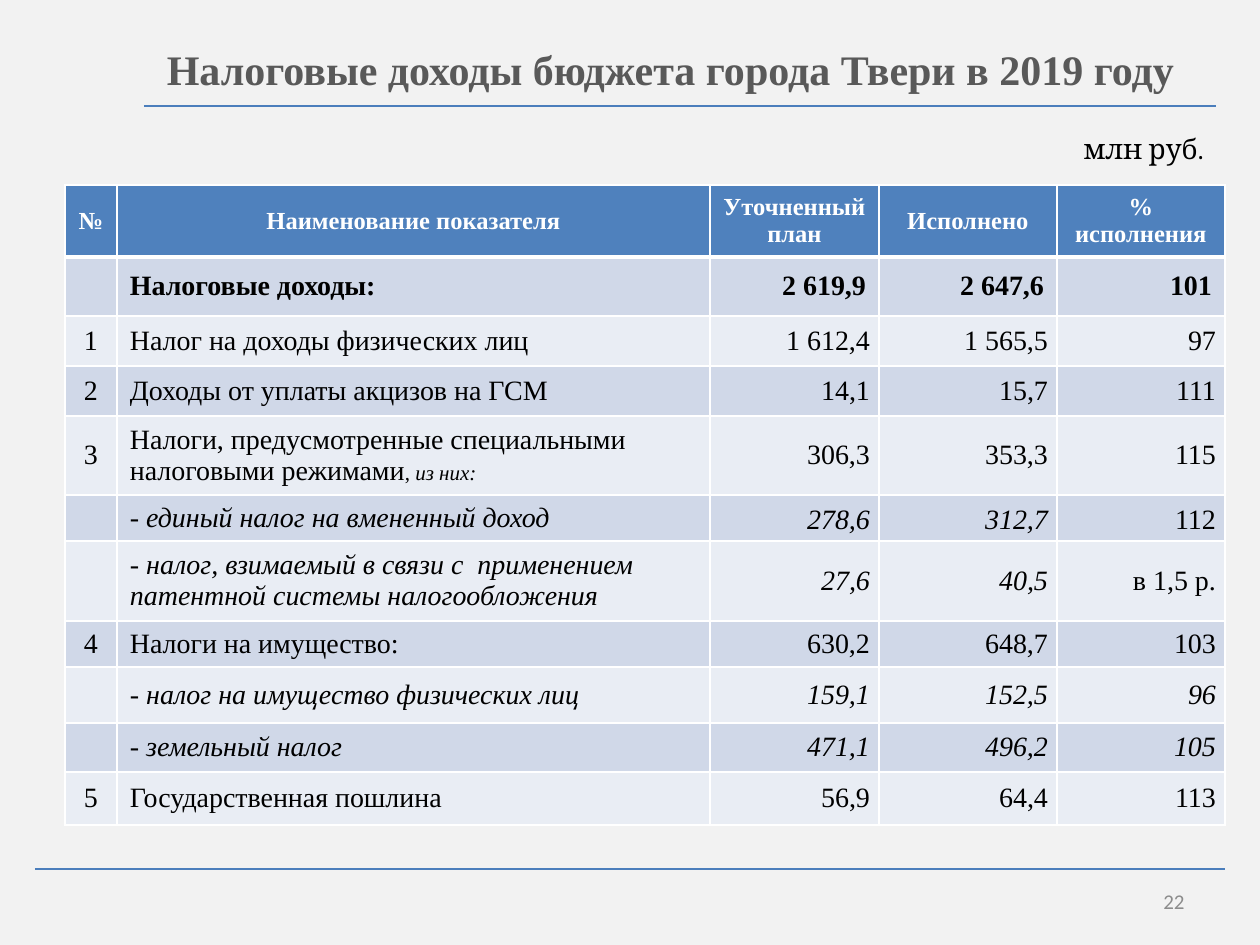
from lxml.etree import SubElement
from pptx import Presentation
from pptx.dml.color import RGBColor
from pptx.enum.shapes import MSO_CONNECTOR
from pptx.enum.text import MSO_ANCHOR as ANCHOR, PP_ALIGN as ALIGN
from pptx.oxml.ns import qn
from pptx.util import Pt

SERIF = "Times New Roman"
HEADER_FILL, BANDS = "4F81BD", ("D0D8E8", "E9EDF4")
BLACK, WHITE, RULE = "000000", "FFFFFF", "4B7EBC"
COLUMNS = (52, 593, 169, 178, 168)
HEIGHTS = (72, 59, 50, 50, 79, 46, 80, 46, 56, 49, 53)
HEADINGS = ("№", "Наименование показателя", "Уточненный план", "Исполнено", "% исполнения")
TOTAL = ("", "Налоговые доходы:", "2 619,9", "2 647,6", "101")
SPECIAL_TAXES = "Налоги, предусмотренные специальными налоговыми режимами"
TAXES = (
    ("1", "Налог на доходы физических лиц", "1 612,4", "1 565,5", "97"),
    ("2", "Доходы от уплаты акцизов на ГСМ", "14,1", "15,7", "111"),
    ("3", SPECIAL_TAXES, "306,3", "353,3", "115"),
    ("", "- единый налог на вмененный доход", "278,6", "312,7", "112"),
    ("", "- налог, взимаемый в связи с  применением патентной системы налогообложения",
     "27,6", "40,5", "в 1,5 р."),
    ("4", "Налоги на имущество:", "630,2", "648,7", "103"),
    ("", "- налог на имущество физических лиц", "159,1", "152,5", "96"),
    ("", "- земельный налог", "471,1", "496,2", "105"),
    ("5", "Государственная пошлина", "56,9", "64,4", "113"),
)
UPRIGHT_PERCENTS = ("112", "в 1,5 р.")


def px(length):
    return round(length * 914400 / 126)


def color(value):
    return RGBColor.from_string(value)


def add_run(paragraph, text, size, ink, font=SERIF, bold=False, italic=False):
    run = paragraph.add_run()
    run.text = text
    run.font.name, run.font.size = font, Pt(size)
    run.font.bold, run.font.italic = bold, italic
    run.font.color.rgb = color(ink)


def add_label(slide, box, text, size, ink, font, align, anchor=ANCHOR.TOP, bold=False):
    frame = slide.shapes.add_textbox(*map(px, box)).text_frame
    frame.word_wrap = True
    frame.vertical_anchor = anchor
    line = frame.paragraphs[0]
    line.alignment = align
    add_run(line, text, size, ink, font, bold)


def add_rule(slide, left, right, y):
    rule = slide.shapes.add_connector(MSO_CONNECTOR.STRAIGHT, px(left), px(y), px(right), px(y))
    rule.line.color.rgb = color(RULE)
    rule.line.width = Pt(0.75)
    SubElement(rule._element.spPr, qn("a:effectLst"))


def style_cell(cell, fill, bottom, top):
    properties = cell._tc.get_or_add_tcPr()
    for side, width in (("L", 1), ("R", 1), ("T", top), ("B", bottom)):
        border = SubElement(properties, qn(f"a:ln{side}"), w=str(Pt(width)))
        SubElement(SubElement(border, qn("a:solidFill")), qn("a:srgbClr"), val=WHITE)
    cell.fill.solid()
    cell.fill.fore_color.rgb = color(fill)
    cell.vertical_anchor = ANCHOR.MIDDLE
    cell.margin_left = cell.margin_right = px(13)
    cell.margin_top = cell.margin_bottom = px(6)


def fill_cell(cell, text, row, column, subitem):
    if not text:
        cell.margin_top = cell.margin_bottom = 0
        return
    header, amount = row == 0, column >= 2
    line = cell.text_frame.paragraphs[0]
    if header or column == 0:
        line.alignment = ALIGN.CENTER
    else:
        line.alignment = ALIGN.RIGHT if amount else ALIGN.LEFT
    if amount and row > 1:
        cell.margin_left = cell.margin_right = px(9)
        cell.margin_top = cell.margin_bottom = 0
        if row == 5:
            line.line_spacing = 1.15
    add_run(line, text, 14 if header else 16, WHITE if header else BLACK,
            bold=row < 2, italic=subitem and text not in UPRIGHT_PERCENTS)
    if text == SPECIAL_TAXES:
        add_run(line, ", ", 12, BLACK)
        add_run(line, "из них:", 12, BLACK, italic=True)


def add_tax_table(slide, left, top):
    records = (HEADINGS, TOTAL, *TAXES)
    table = slide.shapes.add_table(len(records), len(COLUMNS), px(left), px(top),
                                   px(sum(COLUMNS)), px(sum(HEIGHTS))).table
    for column, width in zip(table.columns, COLUMNS):
        column.width = px(width)
    for r, (record, height) in enumerate(zip(records, HEIGHTS)):
        table.rows[r].height = px(height)
        fill = BANDS[(r - 1) % 2] if r else HEADER_FILL
        for c, text in enumerate(record):
            cell = table.cell(r, c)
            style_cell(cell, fill, 3 if r == 0 else 1, 3 if r == 1 else 1)
            fill_cell(cell, text, r, c, record[1].startswith("-"))


def add_heading(slide, left, top, width):
    add_label(slide, (left, top, width, 63), "Налоговые доходы бюджета города Твери в 2019 году",
              24, "595959", SERIF, ALIGN.CENTER, bold=True)
    add_rule(slide, left + 29, left + width - 10, top + 69)


def add_footer(slide, left, top, width):
    add_rule(slide, left, left + width, top)
    add_label(slide, (left + width - 321, top + 7, 293, 50), "22", 12, "8C8C8C",
              "Calibri", ALIGN.RIGHT, ANCHOR.MIDDLE)


def main():
    deck = Presentation()
    deck.slide_width, deck.slide_height = px(1260), px(945)
    slide = deck.slides.add_slide(deck.slide_layouts[6])
    slide.background.fill.solid()
    slide.background.fill.fore_color.rgb = color("F2F2F2")
    add_label(slide, (1066, 125, 150, 47), "млн руб.", 16, BLACK, "Cambria", ALIGN.RIGHT)
    add_tax_table(slide, 65, 185)
    add_heading(slide, 115, 37, 1111)
    add_footer(slide, 35, 869, 1190)
    deck.save("out.pptx")


if __name__ == "__main__":
    main()
